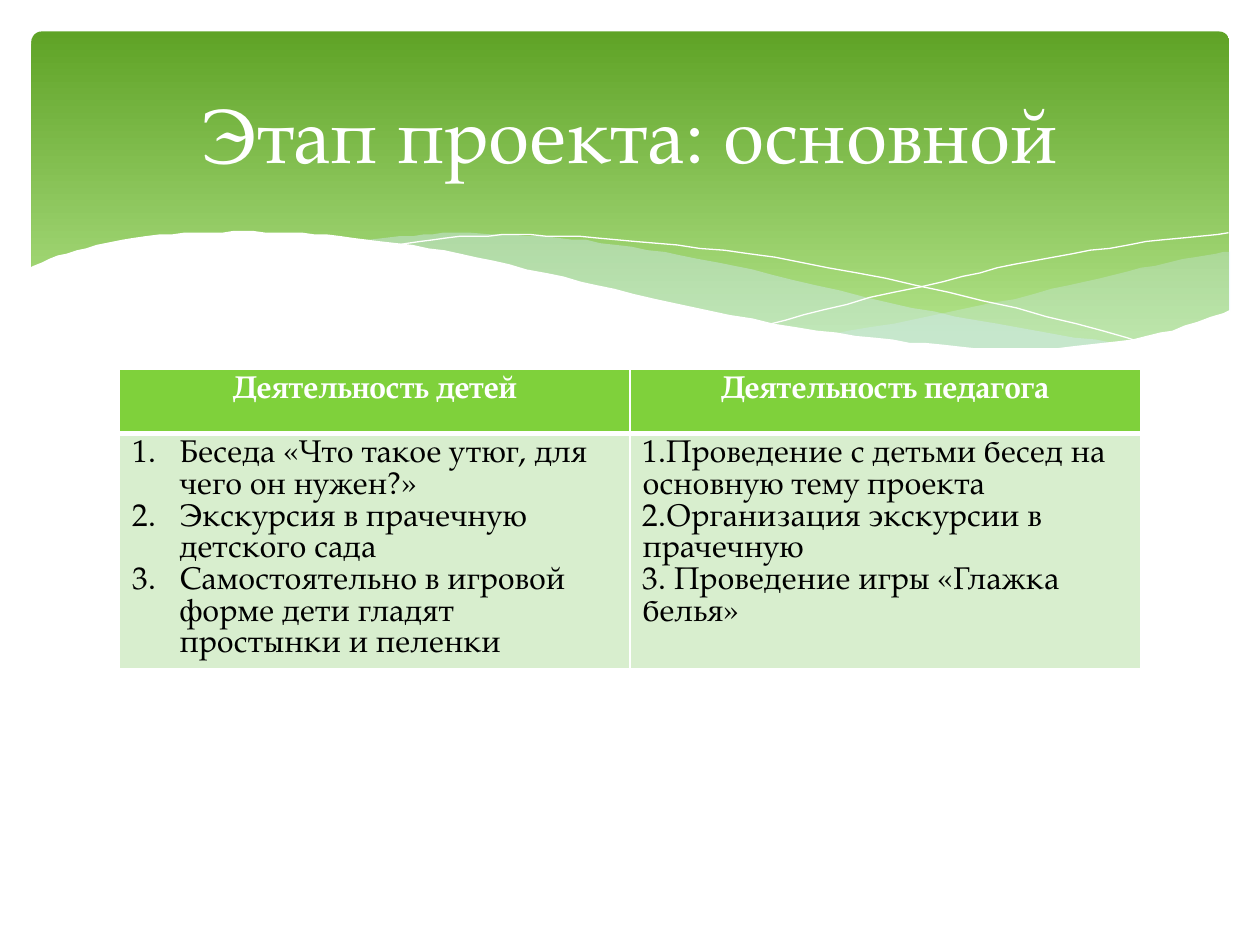
from lxml.etree import SubElement
from pptx import Presentation
from pptx.dml.color import RGBColor
from pptx.enum.shapes import MSO_SHAPE
from pptx.enum.text import MSO_ANCHOR, PP_ALIGN
from pptx.oxml.ns import qn
from pptx.util import Pt

COLORS = {
    "white": "FFFFFF", "black": "000000", "wave": "D6ECFF",
    "banner top": "5FA326", "banner bottom": "B2E389",
    "header": "7FD13B", "body": "D8EECE",
}
FONT = "TeX Gyre Pagella"
TITLE = "Этап проекта: основной"
ACTIVITIES = [
    {
        "heading": "Деятельность детей", "numbered": True,
        "items": [
            "Беседа «Что такое утюг, для чего он нужен?»",
            "Экскурсия в прачечную детского сада",
            "Самостоятельно в игровой форме дети гладят простынки и пеленки",
        ],
    },
    {
        "heading": "Деятельность педагога", "numbered": False,
        "items": [
            "1.Проведение с детьми бесед на основную тему проекта",
            "2.Организация экскурсии в прачечную",
            "3. Проведение игры «Глажка белья»",
        ],
    },
]
BANNER = (18, 18, 684.5, 194.4)
TITLE_BOX = (36, 26.6, 648, 98.6)
TABLE_BOX = (68.4, 211, 583.2, 171.2)
ROW_HEIGHTS = (36.7, 134.5)
NUMBER_INDENT = 27

# Each wave is a list of edges; the points of an edge are joined by a smooth curve.
WAVES = [
    {"fill": "wave", "opacity": 29, "edges": [
        [(702.7, 144), (682.6, 146.9), (652.3, 153.4), (619.9, 160.6),
         (579.6, 170.6), (524.9, 182.2), (475.9, 190.8)],
        [(475.9, 190.8), (507.6, 195.1), (545, 198.7), (578.2, 200.2),
         (614.9, 198.7), (645.8, 194.4), (673.2, 188.6), (702.7, 177.8)]]},
    {"fill": "wave", "opacity": 40, "edges": [
        [(643, 196.6), (602.6, 190.8), (558, 182.9), (508.3, 172.8),
         (452.9, 159.8), (409.7, 149.8), (370.1, 142.6), (334.8, 137.5),
         (302.4, 134.6), (259.9, 133.2), (236.2, 134.6), (205.9, 137.5)],
        [(205.9, 137.5), (232.6, 141.1), (275.8, 149), (323.3, 159.8),
         (381.6, 172.8), (432.7, 183.6), (478.8, 191.5), (519.8, 197.3),
         (556.6, 199.4), (589, 200.2), (617, 199.4), (643, 196.6)]]},
    {"line": "white", "edges": [
        [(222.5, 140.4), (247.7, 136.8), (278.6, 134.6), (311.8, 134.6),
         (352.1, 136.8), (400.3, 141.8), (457.9, 149.8), (523.4, 162.7),
         (598.3, 180.7), (653, 195.8)]]},
    {"line": "white", "edges": [
        [(441.4, 185), (483.8, 173.5), (538.6, 160.6), (580.3, 151.2),
         (623.5, 143.3), (665.3, 136.8), (702, 133.2)]]},
    {"fill": "white", "opacity": 100, "edges": [
        [(703.4, 177.1), (676.8, 186.5), (647.3, 193.7), (612, 198),
         (582.5, 199.4), (547.9, 198), (509.8, 194.4), (466.6, 188.6),
         (416.9, 180), (362.2, 167.8), (321.8, 158.4), (281.5, 149),
         (244.8, 141.8), (210.2, 136.8), (180, 133.9), (151.9, 132.5),
         (127.4, 132.5), (105.1, 133.2), (76.3, 136.1), (54.7, 140.4),
         (33.1, 146.2), (16.6, 153.4)],
        [(16.6, 236.9), (703.4, 236.9)]]},
]


def rgb(name):
    return RGBColor.from_string(COLORS[name])


def points(values):
    return [Pt(value) for value in values]


def smooth(edge, steps=4):
    """Return points along the Catmull-Rom curve through the edge."""
    padded = [edge[0], *edge, edge[-1]]
    curve = [edge[0]]
    for a, b, c, d in zip(padded, padded[1:], padded[2:], padded[3:]):
        for step in range(1, steps + 1):
            t = step / steps
            curve.append(tuple(
                (2 * q + (r - p) * t + (2 * p - 5 * q + 4 * r - s) * t ** 2
                 + (3 * q - p - 3 * r + s) * t ** 3) / 2
                for p, q, r, s in zip(a, b, c, d)))
    return curve


def add_banner(slide):
    banner = slide.shapes.add_shape(MSO_SHAPE.ROUNDED_RECTANGLE, *points(BANNER))
    banner.adjustments[0] = 0.03
    banner.shadow.inherit = False
    banner.line.fill.background()
    banner.fill.gradient()
    banner.fill.gradient_angle = 270
    shades = (("banner top", 0), ("banner bottom", 0.9))
    for stop, (color, position) in zip(banner.fill.gradient_stops, shades):
        stop.color.rgb = rgb(color)
        stop.position = position


def add_wave(slide, wave):
    outline = [point for edge in wave["edges"] for point in smooth(edge)]
    builder = slide.shapes.build_freeform(*outline[0], scale=Pt(1))
    builder.add_line_segments(outline[1:], close="fill" in wave)
    shape = builder.convert_to_shape()
    shape.shadow.inherit = False
    if "line" in wave:
        shape.fill.background()
        shape.line.color.rgb = rgb(wave["line"])
        shape.line.width = Pt(0)
        return
    shape.line.fill.background()
    shape.fill.solid()
    shape.fill.fore_color.rgb = rgb(wave["fill"])
    if wave["opacity"] < 100:
        color = shape._element.spPr.find(qn("a:solidFill"))[0]
        SubElement(color, qn("a:alpha"), val=str(wave["opacity"] * 1000))


def write(paragraph, text, color, align=PP_ALIGN.LEFT, **font_format):
    paragraph.alignment = align
    run = paragraph.add_run()
    run.text = text
    run.font.color.rgb = rgb(color)
    for attribute, value in {"name": FONT, **font_format}.items():
        setattr(run.font, attribute, value)


def number(paragraph):
    properties = paragraph._p.get_or_add_pPr()
    indent = Pt(NUMBER_INDENT)
    properties.set("marL", str(indent))
    properties.set("indent", str(-indent))
    SubElement(properties, qn("a:buFont"), typeface="+mj-lt")
    SubElement(properties, qn("a:buAutoNum"), type="arabicPeriod")


def style_cell(cell, fill, widths):
    """Set white borders, widths given per side, and then the fill."""
    properties = cell._tc.get_or_add_tcPr()
    for side, width in widths.items():
        border = SubElement(properties, qn(f"a:ln{side}"), w=str(Pt(width)))
        solid = SubElement(border, qn("a:solidFill"))
        SubElement(solid, qn("a:srgbClr"), val=COLORS["white"])
    cell.fill.solid()
    cell.fill.fore_color.rgb = rgb(fill)


def add_activities(slide):
    table = slide.shapes.add_table(2, len(ACTIVITIES), *points(TABLE_BOX)).table
    for row, height in zip(table.rows, ROW_HEIGHTS):
        row.height = Pt(height)
    for column, activity in enumerate(ACTIVITIES):
        header, body = table.cell(0, column), table.cell(1, column)
        style_cell(header, "header", {"L": 1, "R": 1, "T": 1, "B": 3})
        style_cell(body, "body", {"L": 1, "R": 1, "T": 3, "B": 1})
        write(header.text_frame.paragraphs[0], activity["heading"], "white",
              PP_ALIGN.CENTER, size=Pt(18), bold=True)
        for index, item in enumerate(activity["items"]):
            frame = body.text_frame
            paragraph = frame.add_paragraph() if index else frame.paragraphs[0]
            write(paragraph, item, "black", size=Pt(18), bold=False)
            if activity["numbered"]:
                number(paragraph)


def add_title(slide):
    frame = slide.shapes.add_textbox(*points(TITLE_BOX)).text_frame
    frame.word_wrap = True
    frame.vertical_anchor = MSO_ANCHOR.MIDDLE
    write(frame.paragraphs[0], TITLE, "white", PP_ALIGN.CENTER, size=Pt(44))


def main():
    deck = Presentation()
    deck.slide_width, deck.slide_height = Pt(720), Pt(540)
    slide = deck.slides.add_slide(deck.slide_layouts[6])
    add_banner(slide)
    for wave in WAVES:
        add_wave(slide, wave)
    add_activities(slide)
    add_title(slide)
    deck.save("out.pptx")


if __name__ == "__main__":
    main()
